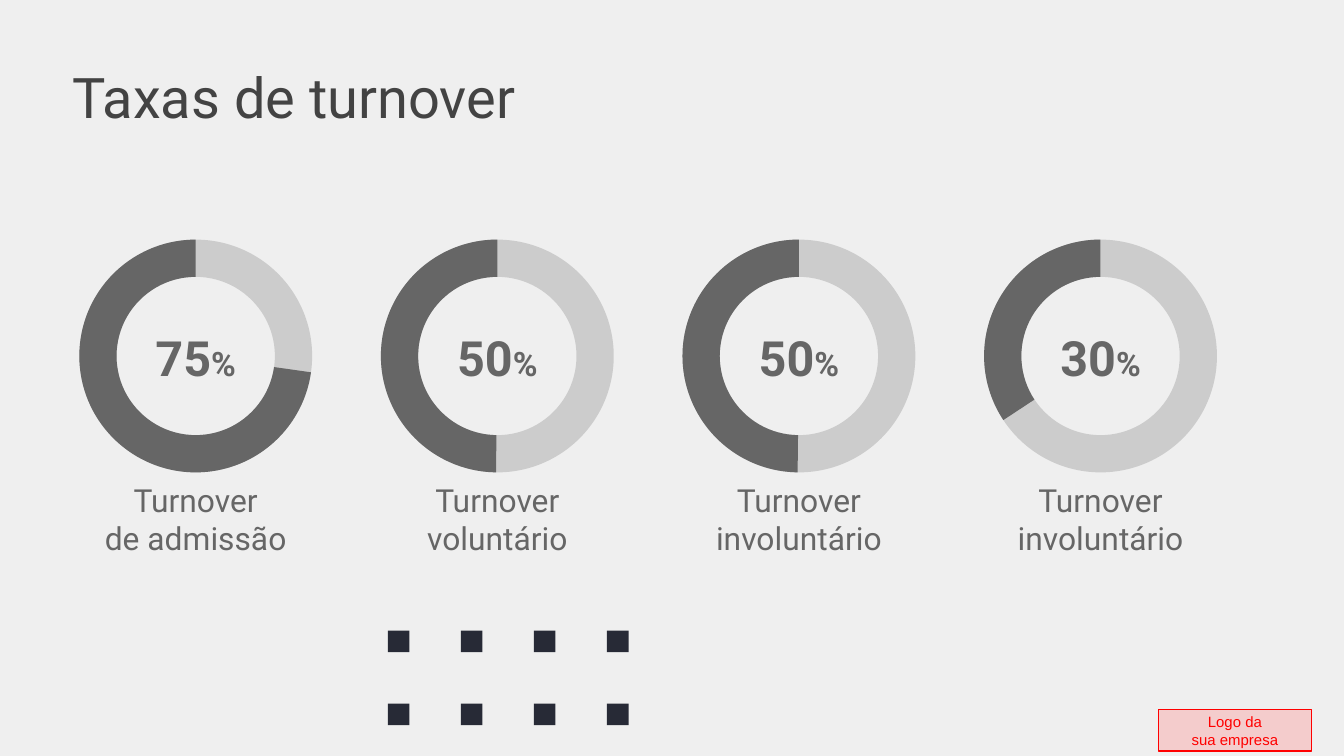
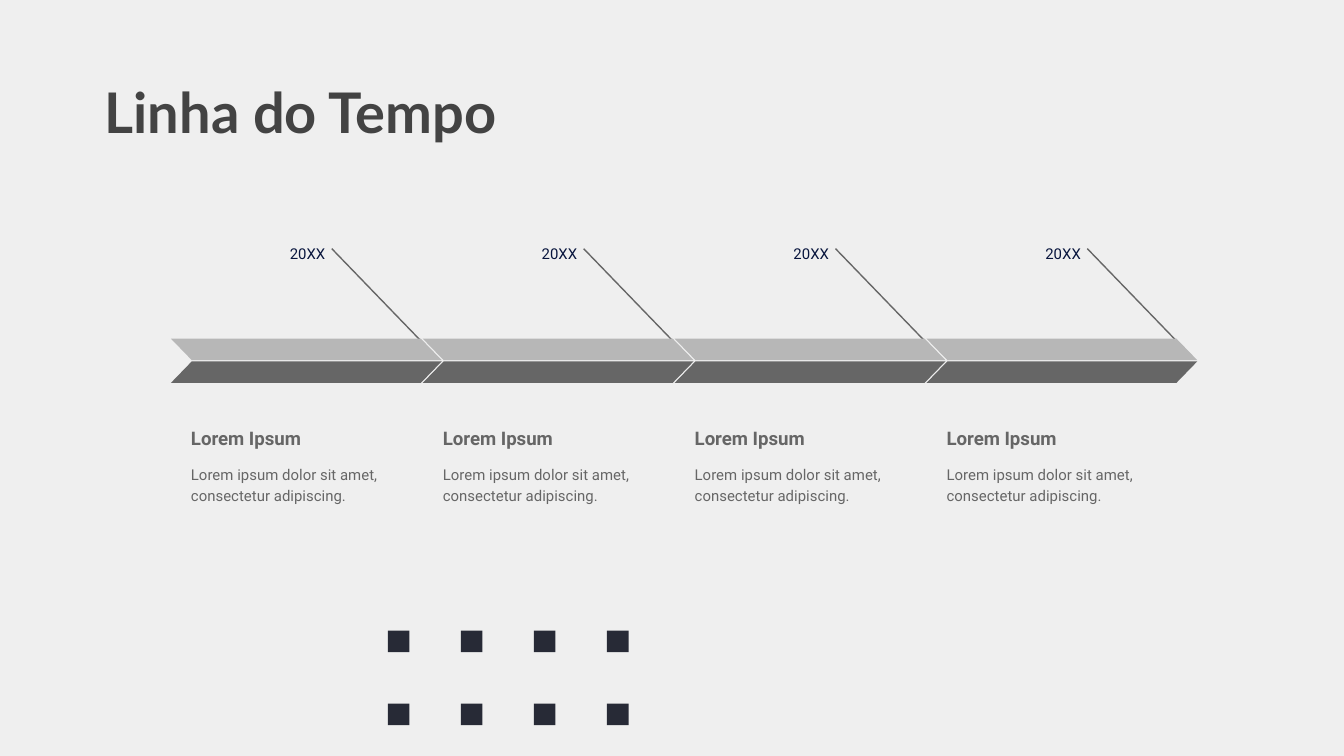
from lxml.etree import SubElement
from pptx import Presentation
from pptx.dml.color import RGBColor
from pptx.enum.shapes import MSO_CONNECTOR, MSO_SHAPE
from pptx.enum.text import MSO_ANCHOR, PP_ALIGN
from pptx.oxml.ns import qn
from pptx.util import Cm, Pt

# Colours
BACKGROUND = RGBColor(0xEF, 0xEF, 0xEF)
DOT = RGBColor(0x27, 0x2A, 0x36)
TITLE = RGBColor(0x43, 0x43, 0x43)
DARK_GRAY = RGBColor(0x66, 0x66, 0x66)
MID_GRAY = RGBColor(0xB7, 0xB7, 0xB7)
LIGHT_GRAY = RGBColor(0xCC, 0xCC, 0xCC)
NAVY = RGBColor(0x08, 0x15, 0x3D)
RED = RGBColor(0xFF, 0x00, 0x00)
PINK = RGBColor(0xF4, 0xCC, 0xCC)


def write_text(shape, text, *, size, color=DARK_GRAY, font="Roboto", bold=None,
               align=PP_ALIGN.LEFT, anchor=MSO_ANCHOR.TOP, margin=0.25,
               line_spacing=None, space_after=None, suffix="", suffix_size=None):
    """Fill a shape with text, one paragraph a line, and an optional suffix."""
    frame = shape.text_frame
    frame.word_wrap = True
    frame.vertical_anchor = anchor
    frame.margin_left = frame.margin_right = Cm(margin)
    frame.margin_top = frame.margin_bottom = Cm(margin)
    for index, line in enumerate(text.split("\n")):
        paragraph = frame.add_paragraph() if index else frame.paragraphs[0]
        paragraph.alignment = align
        if line_spacing:
            paragraph.line_spacing = line_spacing
        if space_after:
            paragraph.space_after = Pt(space_after)
        for content, points in ((line, size), (suffix, suffix_size)):
            if content:
                run = paragraph.add_run()
                run.text = content
                run.font.size = Pt(points)
                run.font.name = font
                run.font.bold = bold
                run.font.color.rgb = color


class Deck:
    """Holds the shared style and the slide being drawn; lengths are in cm."""

    def __init__(self):
        self.presentation = Presentation()
        self.presentation.slide_width = Cm(25.4)
        self.presentation.slide_height = Cm(14.29)
        fill = self.presentation.slide_master.background.fill
        fill.solid()
        fill.fore_color.rgb = BACKGROUND
        self.slide = None
        self.shapes = None

    def new_slide(self):
        layout = self.presentation.slide_layouts[6]
        self.slide = self.presentation.slides.add_slide(layout)
        self.shapes = self.slide.shapes
        # Dot grid at the foot
        for row in range(2):
            for column in range(4):
                self.shape(MSO_SHAPE.RECTANGLE, 7.33 + 1.38 * column,
                           11.92 + 1.38 * row, 0.41, 0.41, DOT)

    def start_group(self):
        self.shapes = self.slide.shapes.add_group_shape().shapes

    def end_group(self):
        self.shapes = self.slide.shapes

    def shape(self, kind, left, top, width, height, color, *,
              line=None, adjustments=(), flip=False):
        shape = self.shapes.add_shape(kind, Cm(left), Cm(top), Cm(width), Cm(height))
        shape.shadow.inherit = False
        shape.fill.solid()
        shape.fill.fore_color.rgb = color
        if line is None:
            shape.line.fill.background()
        else:
            shape.line.color.rgb = line
            shape.line.width = Pt(0.75)
        for index, value in enumerate(adjustments):
            shape.adjustments[index] = value
        if flip:
            shape.element.spPr.find(qn("a:xfrm")).set("flipH", "1")
        return shape

    def text(self, text, left, top, width, height, **style):
        box = self.shapes.add_textbox(Cm(left), Cm(top), Cm(width), Cm(height))
        write_text(box, text, **style)

    def title(self, text, left, top, width, height, **style):
        self.text(text, left, top, width, height, size=30, color=TITLE, **style)

    def line(self, x1, y1, x2, y2, color):
        connector = self.shapes.add_connector(
            MSO_CONNECTOR.STRAIGHT, Cm(x1), Cm(y1), Cm(x2), Cm(y2))
        connector.line.color.rgb = color
        connector.line.width = Pt(0.75)
        SubElement(connector.element.spPr, qn("a:effectLst"))

    def gauge(self, center, percent, start_angle, label):
        """Ring with a dark arc from start_angle (degrees) round to the top."""
        size, top = 4.4, 4.53
        centered = {"align": PP_ALIGN.CENTER, "anchor": MSO_ANCHOR.MIDDLE}
        self.start_group()
        self.shape(MSO_SHAPE.DONUT, center - size / 2, top, size, size,
                   LIGHT_GRAY, adjustments=(0.16,))
        # Angles are stored in 60000ths of a degree, adjustments in 100000ths
        self.shape(MSO_SHAPE.BLOCK_ARC, center - size / 2, top, size, size,
                   DARK_GRAY, adjustments=(start_angle * 0.6, 270 * 0.6, 0.16))
        self.text(label, center - 2.36, 9.32, 4.72, 0.99, size=17, **centered)
        self.text(percent, center - 1.13, 6.25, 2.26, 0.99, size=26, bold=True,
                  suffix="%", suffix_size=18, **centered)
        self.end_group()

    def milestone(self, left, year, heading, body):
        """Two-tone arrow with a year on a leader line and text below."""
        text_left = left + 0.38
        self.text(year, left + 1.44, 4.37, 1.73, 0.66, size=8, color=NAVY,
                  align=PP_ALIGN.RIGHT, line_spacing=1.15, space_after=16)
        self.text(heading, text_left, 7.26, 4.19, 1.24, size=10, bold=True,
                  anchor=MSO_ANCHOR.BOTTOM, margin=0, line_spacing=1.15)
        self.text(body, text_left, 8.76, 4.29, 1.24, size=8, margin=0,
                  line_spacing=1.15, space_after=16)
        self.line(left + 3.04, 4.7, left + 5.04, 6.77, DARK_GRAY)
        for top, color, flip in ((6.4, MID_GRAY, True), (6.83, DARK_GRAY, False)):
            self.shape(MSO_SHAPE.PARALLELOGRAM, left, top, 5.12, 0.41, color,
                       adjustments=(0.97,), flip=flip)


def build_turnover(deck):
    deck.new_slide()
    logo = deck.shape(MSO_SHAPE.RECTANGLE, 21.89, 13.41, 2.9, 0.79, PINK, line=RED)
    write_text(logo, "Logo da\nsua empresa", size=8, color=RED, font="Arial",
               align=PP_ALIGN.CENTER, anchor=MSO_ANCHOR.MIDDLE)
    deck.title("Taxas de turnover", 1.12, 1.07, 20.12, 1.52, line_spacing=0.9)
    gauges = (
        ("75", 8.05, "Turnover\nde admissão"),
        ("50", 90.63, "Turnover\nvoluntário"),
        ("50", 90.63, "Turnover\ninvoluntário"),
        ("30", 146.58, "Turnover\ninvoluntário"),
    )
    for index, gauge in enumerate(gauges):
        deck.gauge(3.7 + 5.7 * index, *gauge)


def build_timeline(deck):
    deck.new_slide()
    for index in range(4):
        deck.milestone(3.23 + 4.76 * index, "20XX", "Lorem Ipsum",
                       "Lorem ipsum dolor sit amet, consectetur adipiscing.")
    deck.title("Linha do Tempo", 1.73, 1.22, 8.97, 1.3, font="Lato", bold=True)


def main():
    deck = Deck()
    build_turnover(deck)
    build_timeline(deck)
    deck.presentation.save("out.pptx")


if __name__ == "__main__":
    main()
